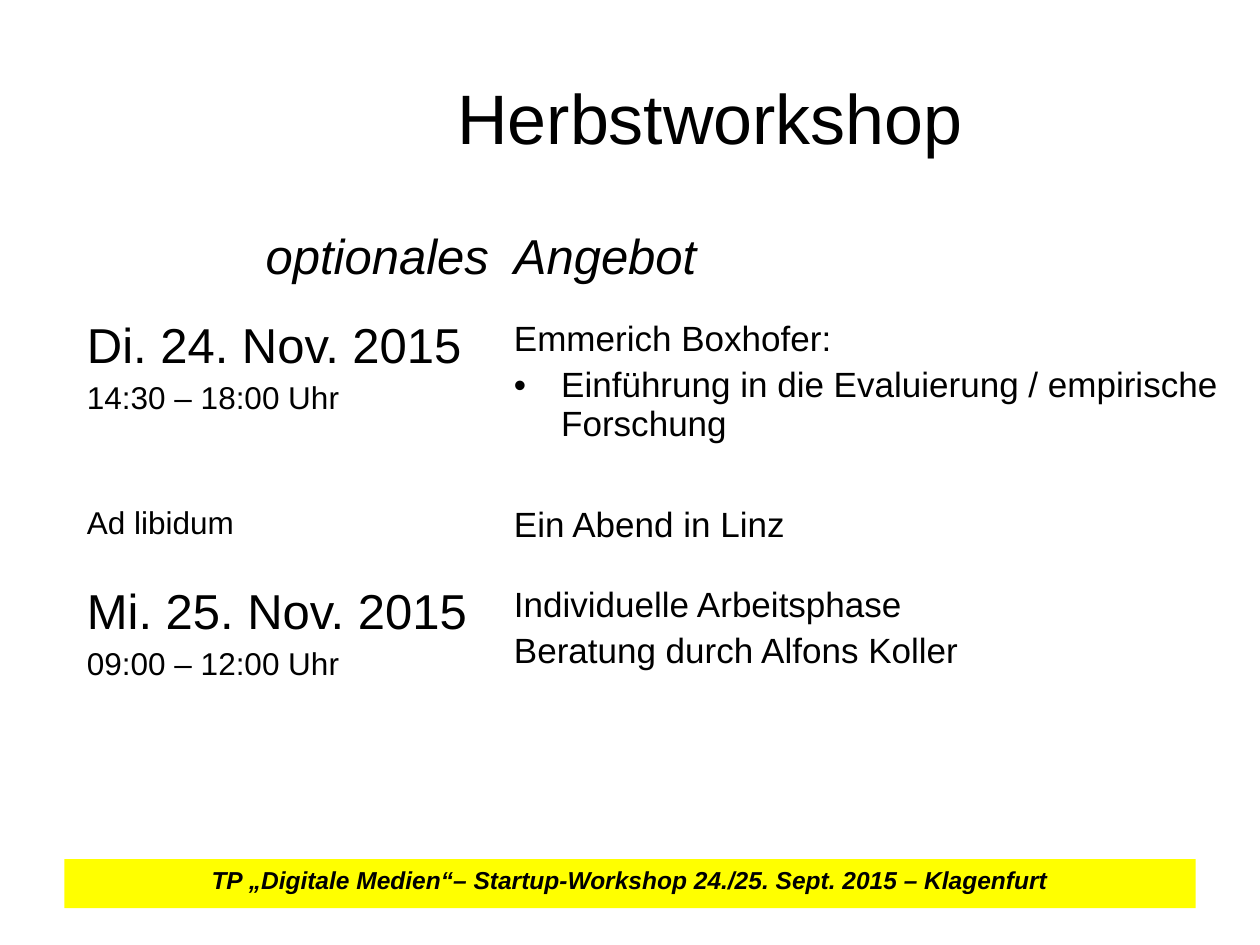
"""Builds the schedule slide for the autumn workshop."""
from dataclasses import dataclass

from lxml.etree import SubElement
from pptx import Presentation
from pptx.dml.color import RGBColor
from pptx.enum.shapes import MSO_SHAPE
from pptx.enum.text import MSO_ANCHOR, PP_ALIGN
from pptx.oxml.ns import qn
from pptx.util import Pt


@dataclass(frozen=True)
class Theme:
    font: str = "Arial"
    ink: RGBColor = RGBColor(0, 0, 0)
    band: RGBColor = RGBColor(255, 255, 0)
    title: int = 40
    heading: int = 28
    body: int = 20
    detail: int = 18
    footer: int = 14
    spacing: float = 0.2
    indent: int = 27


THEME = Theme()
TITLE = "Herbstworkshop"
FOOTER = "TP „Digitale Medien“– Startup-Workshop 24./25. Sept. 2015 – Klagenfurt"
HEADER_STYLE = {"size": THEME.heading, "italic": True}
SCHEDULE = [
    (51, [("optionales", {**HEADER_STYLE, "align": PP_ALIGN.RIGHT})],
     [("Angebot", HEADER_STYLE)]),
    (106.5, [("Di. 24. Nov. 2015", {"size": THEME.heading}),
             ("14:30 – 18:00 Uhr", {"size": THEME.detail})],
     [("Emmerich Boxhofer:", {}),
      ("Einführung in die Evaluierung / empirische Forschung", {"bullet": True})]),
    (45.5, [("Ad libidum", {"size": THEME.detail})],
     [("Ein Abend in Linz", {})]),
    (106.5, [("Mi. 25. Nov. 2015", {"size": THEME.heading}),
             ("09:00 – 12:00 Uhr", {"size": THEME.detail})],
     [("Individuelle Arbeitsphase", {}),
      ("Beratung durch Alfons Koller", {})]),
]
COLUMN_WIDTHS = (244, 419.5)
TITLE_BOX = (127.5, 21.5, 556.5, 90)
TABLE_ORIGIN = (42.5, 128)
FOOTER_BOX = (36.75, 491, 646.5, 28)


def points(values):
    return [Pt(value) for value in values]


def add_bullet(paragraph):
    properties = paragraph._p.get_or_add_pPr()
    properties.set("marL", str(Pt(THEME.indent)))
    properties.set("indent", str(-Pt(THEME.indent)))
    SubElement(properties, qn("a:buFont"), typeface=THEME.font)
    SubElement(properties, qn("a:buChar"), char="•")


def write(paragraph, text, size=THEME.body, align=PP_ALIGN.LEFT,
          bold=False, italic=False, bullet=False):
    if bullet:
        add_bullet(paragraph)
    paragraph.alignment = align
    run = paragraph.add_run()
    run.text = text
    font = run.font
    font.name, font.size, font.bold, font.italic = THEME.font, Pt(size), bold, italic
    font.color.rgb = THEME.ink


def fill_cell(cell, lines):
    cell.fill.background()
    frame = cell.text_frame
    for index, (text, style) in enumerate(lines):
        paragraph = frame.add_paragraph() if index else frame.paragraphs[0]
        if index:
            paragraph.space_before = Pt(THEME.spacing * style.get("size", THEME.body))
        write(paragraph, text, **style)


def add_title(slide):
    title = slide.shapes.title
    title.left, title.top, title.width, title.height = points(TITLE_BOX)
    title.text_frame.vertical_anchor = MSO_ANCHOR.MIDDLE
    write(title.text_frame.paragraphs[0], TITLE, THEME.title, PP_ALIGN.CENTER)


def add_schedule(slide):
    size = sum(COLUMN_WIDTHS), sum(row[0] for row in SCHEDULE)
    table = slide.shapes.add_table(
        len(SCHEDULE), len(COLUMN_WIDTHS), *points(TABLE_ORIGIN + size)).table
    table.first_row = table.horz_banding = False
    for column, width in zip(table.columns, COLUMN_WIDTHS):
        column.width = Pt(width)
    for row, (height, *entries) in zip(table.rows, SCHEDULE):
        row.height = Pt(height)
        for cell, lines in zip(row.cells, entries):
            fill_cell(cell, lines)


def add_footer(slide):
    band = slide.shapes.add_shape(MSO_SHAPE.RECTANGLE, *points(FOOTER_BOX))
    band.shadow.inherit = False
    band.fill.solid()
    band.fill.fore_color.rgb = THEME.band
    band.line.fill.background()
    band.text_frame.word_wrap = True
    band.text_frame.vertical_anchor = MSO_ANCHOR.TOP
    write(band.text_frame.paragraphs[0], FOOTER, THEME.footer,
          PP_ALIGN.CENTER, bold=True, italic=True)


def main():
    presentation = Presentation()
    presentation.slide_width, presentation.slide_height = Pt(720), Pt(540)
    slide = presentation.slides.add_slide(presentation.slide_layouts.get_by_name("Title Only"))
    add_title(slide)
    add_schedule(slide)
    add_footer(slide)
    presentation.save("out.pptx")


if __name__ == "__main__":
    main()
